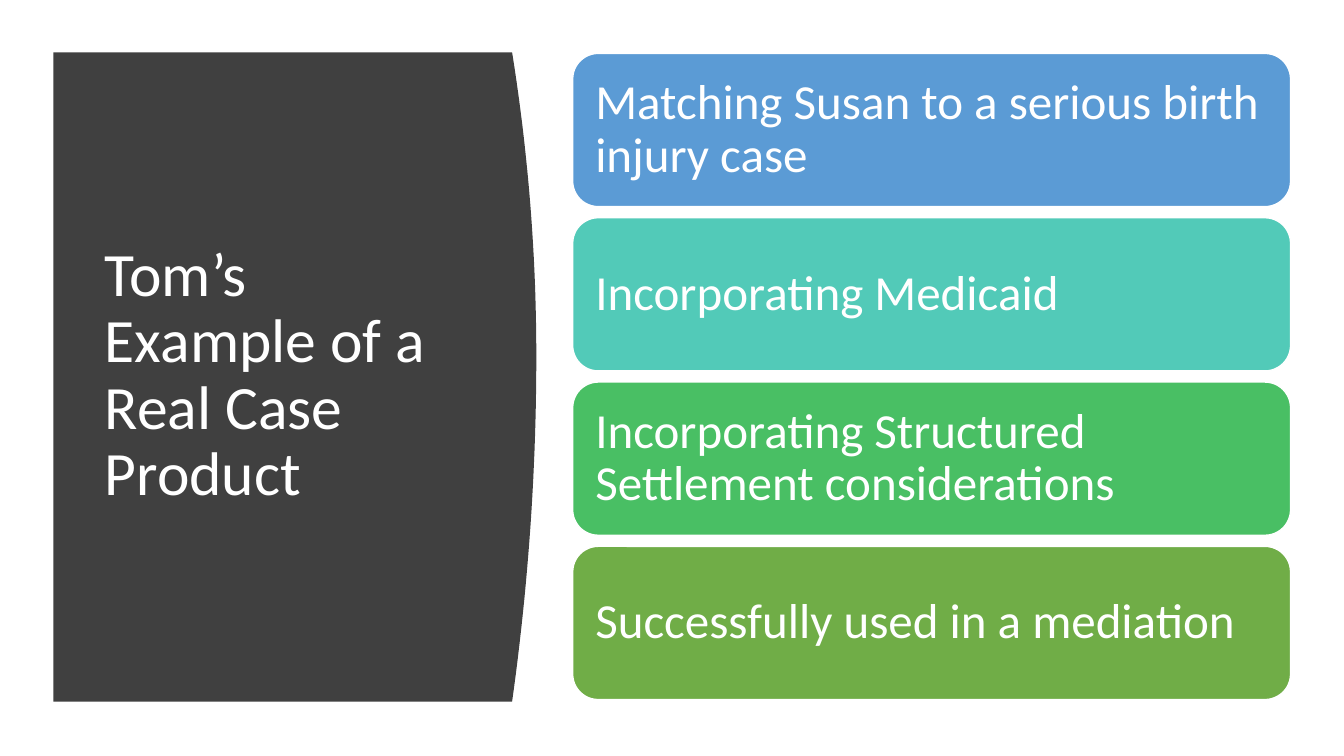
from dataclasses import dataclass

from pptx import Presentation
from pptx.dml.color import RGBColor
from pptx.enum.shapes import MSO_SHAPE as Preset
from pptx.enum.text import MSO_ANCHOR as Anchor, MSO_AUTO_SIZE as AutoSize, PP_ALIGN as Align
from pptx.util import Inches, Pt


@dataclass(frozen=True)
class Theme:
    font: str = "Calibri"
    title_size: int = 44
    card_size: int = 35
    line_spacing: float = 0.9
    light: str = "FFFFFF"
    panel: str = "404040"
    cards: tuple = ("5B9BD5", "52CAB8", "49BF64", "70AD47")


PANEL_LEFT, PANEL_TOP, PANEL_BOTTOM = 0.53, 0.52, 6.96
CORNER_X, BULGE_X, BULGE_Y = 5.08, 5.32, 3.53
CURVE_STEPS = 44
CARD_LEFT, CARD_TOP, CARD_WIDTH, CARD_HEIGHT = 5.68, 0.53, 7.12, 1.52
CARD_PITCH = 1.63
TOPICS = (
    "Matching Susan to a serious birth injury case",
    "Incorporating Medicaid",
    "Incorporating Structured Settlement considerations",
    "Successfully used in a mediation",
)


def curve_point(step):
    y = PANEL_TOP + (PANEL_BOTTOM - PANEL_TOP) * step / CURVE_STEPS
    reach = BULGE_Y - PANEL_TOP if y < BULGE_Y else PANEL_BOTTOM - BULGE_Y
    x = BULGE_X - (BULGE_X - CORNER_X) * ((y - BULGE_Y) / reach) ** 2
    return Inches(x), Inches(y)


class SlideBuilder:
    def __init__(self, slide, theme):
        self.slide = slide
        self.theme = theme

    def assign(self, target, values):
        for name, value in values.items():
            setattr(target, name, value)

    def paint(self, shape, color):
        shape.shadow.inherit = False
        shape.fill.solid()
        shape.fill.fore_color.rgb = RGBColor.from_string(color)

    def set_text(self, shape, wording, size, inset_x, inset_y):
        frame = shape.text_frame
        frame.text = wording
        self.assign(frame, {
            "word_wrap": True,
            "auto_size": AutoSize.NONE,
            "vertical_anchor": Anchor.MIDDLE,
            "margin_left": Inches(inset_x),
            "margin_right": Inches(inset_x),
            "margin_top": Inches(inset_y),
            "margin_bottom": Inches(inset_y),
        })
        paragraph = frame.paragraphs[0]
        self.assign(paragraph, {
            "alignment": Align.LEFT,
            "line_spacing": self.theme.line_spacing,
            "space_before": Pt(0),
        })
        font = paragraph.runs[0].font
        self.assign(font, {"name": self.theme.font, "size": Pt(size), "bold": False})
        font.color.rgb = RGBColor.from_string(self.theme.light)

    def panel(self):
        outline = self.slide.shapes.build_freeform(Inches(PANEL_LEFT), Inches(PANEL_TOP))
        edge = [curve_point(step) for step in range(CURVE_STEPS + 1)]
        outline.add_line_segments(edge + [(Inches(PANEL_LEFT), Inches(PANEL_BOTTOM))])
        panel = outline.convert_to_shape()
        self.paint(panel, self.theme.panel)
        panel.line.fill.background()
        return panel

    def title(self, wording, backdrop):
        title = self.slide.shapes.title
        self.assign(title, {
            "left": Inches(0.94),
            "top": Inches(1.11),
            "width": Inches(3.74),
            "height": Inches(5.24),
        })
        self.set_text(title, wording, self.theme.title_size, 0.1, 0.05)
        backdrop.element.addnext(title.element)

    def card(self, wording, top, color):
        card = self.slide.shapes.add_shape(
            Preset.ROUNDED_RECTANGLE, Inches(CARD_LEFT), Inches(top),
            Inches(CARD_WIDTH), Inches(CARD_HEIGHT))
        self.paint(card, color)
        card.line.color.rgb = RGBColor.from_string(self.theme.light)
        card.line.width = Pt(1)
        self.set_text(card, wording, self.theme.card_size, 0.15, 0.15)


def main():
    deck = Presentation()
    deck.slide_width, deck.slide_height = Inches(13.33), Inches(7.5)
    theme = Theme()
    builder = SlideBuilder(deck.slides.add_slide(deck.slide_layouts[5]), theme)
    builder.title("Tom’s Example of a Real Case Product", builder.panel())
    for row, (topic, color) in enumerate(zip(TOPICS, theme.cards)):
        builder.card(topic, CARD_TOP + row * CARD_PITCH, color)
    deck.save("out.pptx")


if __name__ == "__main__":
    main()
